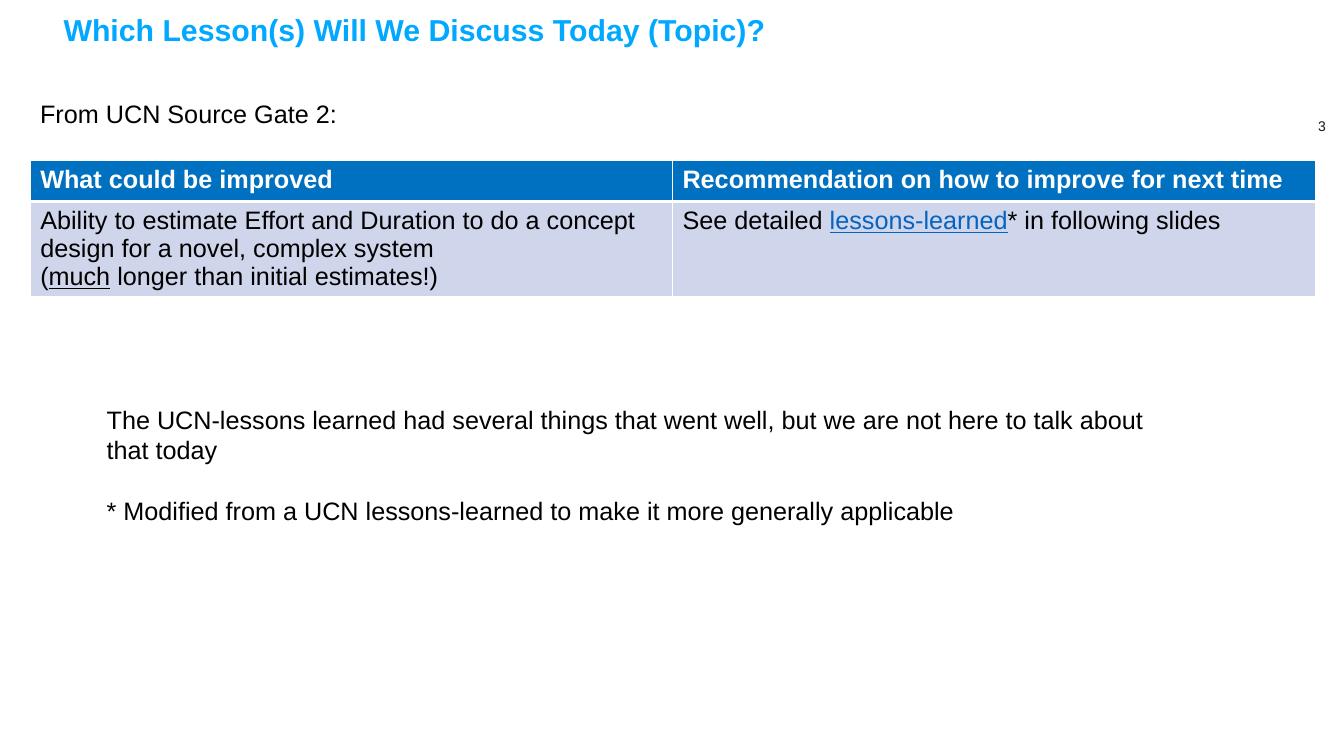
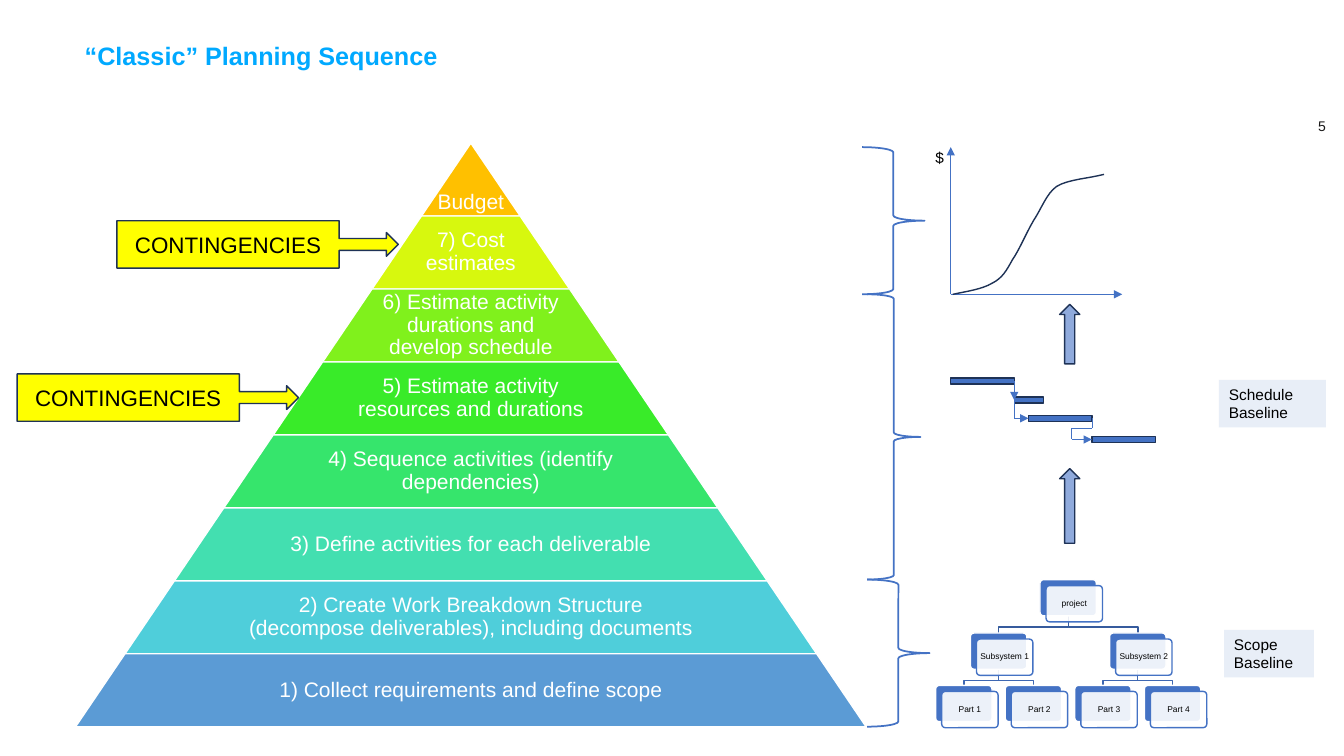
from dataclasses import dataclass

from pptx import Presentation
from pptx.dml.color import RGBColor
from pptx.enum.shapes import MSO_CONNECTOR as Connector, MSO_SHAPE as Preset
from pptx.enum.text import MSO_ANCHOR as Anchor, MSO_AUTO_SIZE as AutoSize, PP_ALIGN as Align
from pptx.oxml.ns import qn
from pptx.util import Inches, Pt
from lxml.etree import SubElement


@dataclass(frozen=True)
class Theme:
    font: str = "Arial"
    title: str = "00A9FF"
    text: str = "000000"
    page: str = "181717"
    white: str = "FFFFFF"
    header: str = "0070C0"
    cell: str = "CFD5EA"
    link: str = "0563C1"
    accent: str = "4472C4"
    outline: str = "1E3256"
    arrow: str = "8FAADC"
    label: str = "DAE3F3"
    warning: str = "FFFF00"
    tree: tuple = ("365B9D", "3E67B2")
    pyramid: tuple = ("FFC000", "D7F80E", "80F11C", "39EB29",
                      "36E56C", "43DFB0", "4FCEDA", "5B9BD5")
    title_size: float = 21.6
    body_size: float = 18
    callout_size: float = 16
    level_size: float = 15
    label_size: float = 11
    page_size: float = 10
    node_size: float = 6


THEME = Theme()


def apply(target, values):
    for name, value in values.items():
        setattr(target, name, value)


def inches(*values):
    return [Inches(value) for value in values]


def bezier(start, curves, steps=8):
    points = [start]
    for first, second, end in curves:
        origin = points[-1]
        for step in range(1, steps + 1):
            t = step / steps
            weights = ((1 - t) ** 3, 3 * t * (1 - t) ** 2, 3 * t * t * (1 - t), t ** 3)
            corners = (origin, first, second, end)
            points.append(tuple(sum(w * corner[axis] for w, corner in zip(weights, corners))
                                for axis in (0, 1)))
    return points


class Deck:
    def __init__(self, theme):
        self.theme = theme
        self.presentation = Presentation()
        apply(self.presentation, {"slide_width": Inches(13.33), "slide_height": Inches(7.5)})
        self.slide = None

    def add_slide(self, title, box, size, number):
        self.slide = self.presentation.slides.add_slide(self.presentation.slide_layouts[5])
        shape = self.slide.shapes.title
        apply(shape, dict(zip(("left", "top", "width", "height"), inches(*box))))
        self.set_text(shape, [title], size, self.theme.title, bold=True, line_spacing=0.9)
        self.text((12.5, 1.07, 0.7, 0.35), [str(number)], self.theme.page_size, self.theme.page,
                  align=Align.RIGHT, anchor=Anchor.MIDDLE, insets=(0.1, 0.05, 0.05, 0.05))

    def set_text(self, holder, paragraphs, size, color, bold=False, align=Align.LEFT,
                 anchor=Anchor.TOP, insets=(0.1, 0.05, 0.1, 0.05), **paragraph_format):
        frame = holder.text_frame
        sides = ("margin_left", "margin_top", "margin_right", "margin_bottom")
        apply(frame, {"word_wrap": True, "auto_size": AutoSize.NONE, "vertical_anchor": anchor,
                      **dict(zip(sides, inches(*insets)))})
        self.fill_text(frame, paragraphs, size, color, bold, alignment=align, **paragraph_format)

    def fill_text(self, frame, paragraphs, size, color, bold, **paragraph_format):
        for index, runs in enumerate(paragraphs):
            paragraph = frame.add_paragraph() if index else frame.paragraphs[0]
            apply(paragraph, paragraph_format)
            if not index:
                paragraph.space_before = Pt(0)
            for item in [runs] if isinstance(runs, str) else runs:
                text, special = (item, {}) if isinstance(item, str) else item
                run = paragraph.add_run()
                run.text = text
                apply(run.font, {"name": self.theme.font, "size": Pt(size), "bold": bold,
                                 "underline": special.get("underline", False)})
                run.font.color.rgb = RGBColor.from_string(special.get("color", color))

    def text(self, box, paragraphs, size, color=THEME.text, **options):
        text_box = self.slide.shapes.add_textbox(*inches(*box))
        self.set_text(text_box, paragraphs, size, color, **options)

    def paint(self, shape, fill=None, line=None, weight=1, opacity=None):
        shape.shadow.inherit = False
        if fill:
            shape.fill.solid()
            shape.fill.fore_color.rgb = RGBColor.from_string(fill)
            if opacity:
                color = shape.element.spPr.find(qn("a:solidFill"))[0]
                SubElement(color, qn("a:alpha"), val=str(opacity * 1000))
        else:
            shape.fill.background()
        if line:
            shape.line.color.rgb = RGBColor.from_string(line)
            shape.line.width = Pt(weight)
        else:
            shape.line.fill.background()

    def shape(self, preset, box, adjustments=(), **style):
        shape = self.slide.shapes.add_shape(preset, *inches(*box))
        for index, value in enumerate(adjustments):
            shape.adjustments[index] = value
        self.paint(shape, **style)
        return shape

    def outline(self, points, color):
        corners = [inches(*point) for point in points]
        builder = self.slide.shapes.build_freeform(*corners[0])
        builder.add_line_segments(corners[1:], close=False)
        self.paint(builder.convert_to_shape(), line=color)

    def arrow(self, points, start=None, end=None):
        legs = list(zip(points, points[1:]))
        for index, (origin, target) in enumerate(legs):
            connector = self.slide.shapes.add_connector(
                Connector.STRAIGHT, *inches(*origin, *target))
            connector.line.color.rgb = RGBColor.from_string(self.theme.accent)
            connector.line.width = Pt(0.5)
            properties = connector.element.spPr
            SubElement(properties, qn("a:effectLst"))
            if start and index == 0:
                connector.begin_connect(start, 3)
            if index == len(legs) - 1:
                SubElement(properties.find(qn("a:ln")), qn("a:tailEnd"), type="triangle")
                if end:
                    connector.end_connect(end, 1)

    def table(self, box, widths, heights, rows):
        frame = self.slide.shapes.add_table(len(rows), len(widths), *inches(*box))
        table = frame.table
        for column, width in zip(table.columns, widths):
            column.width = Inches(width)
        for row_index, (row, height) in enumerate(zip(rows, heights)):
            table.rows[row_index].height = Inches(height)
            heading = row_index == 0
            for column_index, paragraphs in enumerate(row):
                cell = table.cell(row_index, column_index)
                self.borders(cell, {"lnT" if row_index else "lnB": 3})
                cell.fill.solid()
                cell.fill.fore_color.rgb = RGBColor.from_string(
                    self.theme.header if heading else self.theme.cell)
                self.fill_text(cell.text_frame, paragraphs, self.theme.body_size,
                               self.theme.white if heading else self.theme.text, heading)

    def borders(self, cell, heavy):
        properties = cell._tc.get_or_add_tcPr()
        for side in ("lnL", "lnR", "lnT", "lnB"):
            line = SubElement(properties, qn("a:" + side), w=str(Pt(heavy.get(side, 1))))
            fill = SubElement(line, qn("a:solidFill"))
            SubElement(fill, qn("a:srgbClr"), val=self.theme.white)

    def label(self, box, text):
        shape = self.shape(Preset.RECTANGLE, box, fill=self.theme.label, opacity=60)
        self.set_text(shape, [text], self.theme.label_size, self.theme.text)

    def callout(self, left, top):
        shape = self.shape(Preset.RIGHT_ARROW_CALLOUT, (left, top, 2.79, 0.47),
                           (0.25, 0.25, 0.25, 0.79),
                           fill=self.theme.warning, line=self.theme.outline)
        self.set_text(shape, ["CONTINGENCIES"], self.theme.callout_size, self.theme.text,
                      align=Align.CENTER, anchor=Anchor.MIDDLE)

    def pyramid(self, center, top, half_step, total_height, levels):
        height = total_height / len(levels)
        for index, (text, color) in enumerate(zip(levels, self.theme.pyramid)):
            level_top = top + height * index
            width = 2 * half_step * (index + 1)
            self.shape(Preset.TRAPEZOID, (center - width / 2, level_top, width, height),
                       (half_step / height,), fill=color, line=self.theme.white)
            text_width = width * 0.65 if index else width
            self.text((center - text_width / 2, level_top, text_width, height), [text],
                      self.theme.level_size, self.theme.white, align=Align.CENTER,
                      anchor=Anchor.MIDDLE if index else Anchor.BOTTOM,
                      insets=(0.02,) * 4, line_spacing=0.9)

    def tree(self, left, pitch, tops, rows):
        width, height, offset = 0.56, 0.36, 0.06
        leaves = len(rows[-1])
        lefts = []
        for row in rows:
            span = leaves / len(row)
            lefts.append([left + pitch * (i * span + (span - 1) / 2) for i in range(len(row))])
        for level, color in enumerate(self.theme.tree):
            bottom = tops[level] + height
            for index, child in enumerate(lefts[level + 1]):
                start, end = lefts[level][index // 2] + width / 2, child + width / 2
                middle = bottom + 0.11
                self.outline([(start, bottom), (start, middle), (end, middle),
                              (end, tops[level + 1])], color)
        for top, row, row_lefts in zip(tops, rows, lefts):
            for text, x in zip(row, row_lefts):
                self.shape(Preset.ROUNDED_RECTANGLE, (x, top, width, height), (0.1,),
                           fill=self.theme.accent, line=self.theme.white)
                front = self.shape(Preset.ROUNDED_RECTANGLE,
                                   (x + offset, top + offset, width, height), (0.1,),
                                   fill=self.theme.white, line=self.theme.accent, opacity=90)
                self.set_text(front, [text], self.theme.node_size, self.theme.text,
                              align=Align.CENTER, anchor=Anchor.MIDDLE,
                              insets=(0, 0.03, 0, 0.03), line_spacing=0.9)


def build_topic(deck):
    theme = deck.theme
    deck.add_slide("Which Lesson(s) Will We Discuss Today (Topic)?",
                   (0.53, 0.1, 9.79, 0.55), theme.title_size, 3)
    deck.table((0.3, 1.59, 12.75, 1.34), (6.37, 6.38), (0.41, 0.93), [
        [["What could be improved"], ["Recommendation on how to improve for next time"]],
        [["Ability to estimate Effort and Duration to do a concept design for a novel, "
          "complex system",
          ["(", ("much", {"underline": True}), " longer than initial estimates!)"]],
         [["See detailed ", ("lessons-learned", {"underline": True, "color": theme.link}),
           "* in following slides"]]],
    ])
    deck.text((0.96, 3.96, 10.76, 1.31), [
        "The UCN-lessons learned had several things that went well, but we are not here "
        "to talk about that today",
        "* Modified from a UCN lessons-learned to make it more generally applicable",
    ], theme.body_size, space_before=Pt(22))
    deck.text((0.3, 0.93, 10.76, 0.4), ["From UCN Source Gate 2:"], theme.body_size)


def build_planning(deck):
    theme = deck.theme
    deck.add_slide("“Classic” Planning Sequence", (0.74, 0.38, 9.79, 0.71), theme.body_size, 5)
    deck.pyramid(4.67, 1.42, 0.49, 5.79, [
        "Budget",
        "7) Cost estimates",
        "6) Estimate activity durations and develop schedule",
        "5) Estimate activity resources and durations",
        "4) Sequence activities (identify dependencies)",
        "3) Define activities for each deliverable",
        "2) Create Work Breakdown Structure (decompose deliverables), including documents",
        "1) Collect requirements and define scope",
    ])
    for box in ((8.6, 5.75, 0.62, 1.46), (8.6, 2.92, 0.53, 2.83), (8.55, 1.46, 0.62, 1.46)):
        deck.shape(Preset.RIGHT_BRACE, box, line=theme.accent, weight=1.25)

    origin = (9.43, 2.92)
    for tip in ((9.43, 1.46), (11.13, 2.92)):
        deck.arrow([origin, tip])
    deck.outline(bezier((9.45, 2.92), [
        ((9.59, 2.89), (9.74, 2.87), (9.84, 2.81)),
        ((9.94, 2.76), (9.98, 2.69), (10.04, 2.58)),
        ((10.11, 2.48), (10.18, 2.31), (10.25, 2.19)),
        ((10.33, 2.07), (10.38, 1.92), (10.48, 1.85)),
        ((10.59, 1.78), (10.8, 1.77), (10.95, 1.73)),
    ]), theme.outline)
    deck.text((9.18, 1.42, 0.39, 0.29), ["$"], theme.label_size)

    first, second, third, fourth = [
        deck.shape(Preset.RECTANGLE, (left, top, width, 0.06),
                   fill=theme.accent, line=theme.outline)
        for left, top, width in ((9.43, 3.75, 0.63), (10.06, 3.94, 0.29),
                                 (10.2, 4.12, 0.63), (10.83, 4.33, 0.63))]
    deck.arrow([(10.06, 3.78), (10.06, 3.97)], first, second)
    deck.arrow([(10.06, 3.84), (10.06, 4.15), (10.2, 4.15)], end=third)
    deck.arrow([(10.83, 4.15), (10.83, 4.25), (10.63, 4.25), (10.63, 4.36), (10.83, 4.36)],
               third, fourth)
    deck.label((12.09, 3.77, 1.06, 0.47), "Schedule Baseline")

    deck.tree(9.28, 0.69, (5.75, 6.28, 6.8), [
        ["project"],
        ["Subsystem 1", "Subsystem 2"],
        [f"Part {number}" for number in range(1, 5)],
    ])
    deck.label((12.14, 6.25, 0.89, 0.47), "Scope Baseline")
    for top, height in ((4.65, 0.74), (3.02, 0.59)):
        deck.shape(Preset.UP_ARROW, (10.51, top, 0.2, height),
                   fill=theme.arrow, line=theme.outline)
    for left, top in ((0.17, 3.71), (1.16, 2.19)):
        deck.callout(left, top)


def main():
    deck = Deck(THEME)
    build_topic(deck)
    build_planning(deck)
    deck.presentation.save("out.pptx")


if __name__ == "__main__":
    main()
